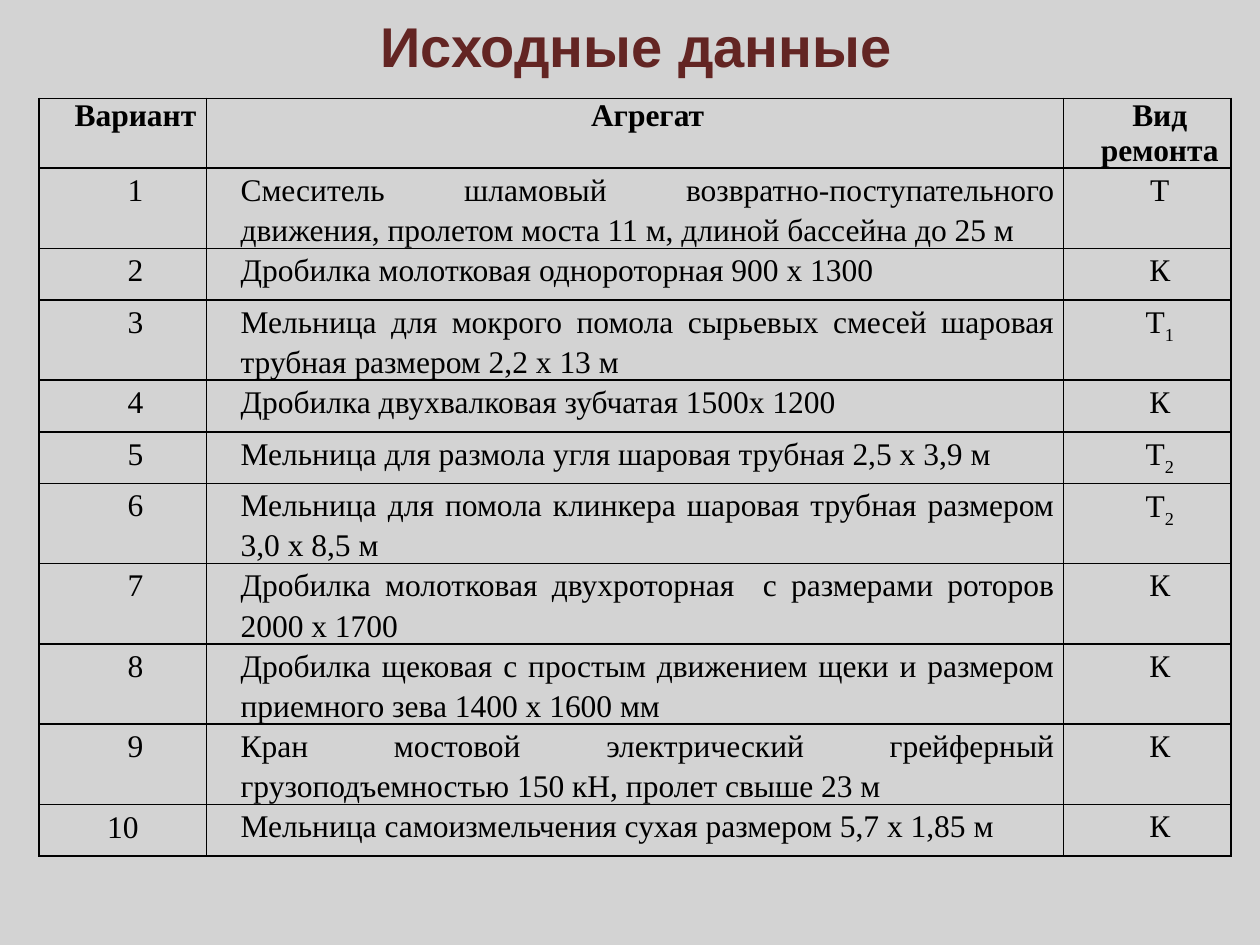
"""Build a slide with a table of initial data for repair planning."""
from lxml import etree
from pptx import Presentation
from pptx.dml.color import RGBColor
from pptx.enum.text import MSO_ANCHOR, PP_ALIGN
from pptx.oxml.ns import qn
from pptx.util import Inches, Pt

CENTER, JUSTIFY = PP_ALIGN.CENTER, PP_ALIGN.JUSTIFY
MIDDLE = MSO_ANCHOR.MIDDLE
COLORS = {"page": "D3D3D3", "title": "632523", "text": "000000", "border": "000000"}
HEADERS = ["Вариант", "Агрегат", "Вид ремонта"]
UNITS = [
    ("Смеситель шламовый возвратно-поступательного движения, "
     "пролетом моста 11 м, длиной бассейна до 25 м", "Т", ""),
    ("Дробилка молотковая однороторная 900 х 1300", "К", ""),
    ("Мельница для мокрого помола сырьевых смесей шаровая трубная размером 2,2 х 13 м", "Т", "1"),
    ("Дробилка двухвалковая зубчатая 1500х 1200", "К", ""),
    ("Мельница для размола угля шаровая трубная 2,5 х 3,9 м", "Т", "2"),
    ("Мельница для помола клинкера шаровая трубная размером 3,0 х 8,5 м", "Т", "2"),
    ("Дробилка молотковая двухроторная  с размерами роторов 2000 х 1700", "К", ""),
    ("Дробилка щековая с простым движением щеки и размером приемного зева 1400 х 1600 мм", "К", ""),
    ("Кран мостовой электрический грейферный грузоподъемностью 150 кН, пролет свыше 23 м", "К", ""),
    ("Мельница самоизмельчения сухая размером 5,7 х 1,85 м", "К", ""),
]
COLUMN_WIDTHS = [1.33, 6.8, 1.33]
ROW_HEIGHT = 0.41


def add_span(para, text, size=18, font="Times New Roman", color="text", bold=False, subscript=False):
    """Add a formatted run to a paragraph."""
    span = para.add_run()
    span.text = text
    span.font.size = Pt(size)
    span.font.name = font
    span.font.bold = bold
    span.font.color.rgb = RGBColor.from_string(COLORS[color])
    if subscript:
        span.font._element.set("baseline", "-25000")


class SlideBuilder:
    """Hold the slide and its table style."""

    def __init__(self, page, inset=0.07, indent=0.2, border_width=1):
        """Keep the style and paint the background."""
        self.page = page
        self.inset = Inches(inset)
        self.indent = Inches(indent)
        self.border_width = Pt(border_width)
        page.background.fill.solid()
        page.background.fill.fore_color.rgb = RGBColor.from_string(COLORS["page"])

    def title(self, text, left, top, width, height):
        """Place and format the title."""
        box = self.page.shapes.title
        box.left, box.top = Inches(left), Inches(top)
        box.width, box.height = Inches(width), Inches(height)
        box.text_frame.vertical_anchor = MIDDLE
        para = box.text_frame.paragraphs[0]
        para.alignment = CENTER
        add_span(para, text, size=32, font="Arial", color="title", bold=True)

    def table(self, row_count, left, top):
        """Add an unbanded table and return it."""
        frame = self.page.shapes.add_table(
            row_count, len(COLUMN_WIDTHS), Inches(left), Inches(top),
            Inches(sum(COLUMN_WIDTHS)), Inches(ROW_HEIGHT * row_count))
        table = frame.table
        table.first_row = table.horz_banding = False
        for column, width in zip(table.columns, COLUMN_WIDTHS):
            column.width = Inches(width)
        for row in table.rows:
            row.height = Inches(ROW_HEIGHT)
        return table

    def cell(self, cell, text, subscript="", align=CENTER, spacing=1.15, bold=False, indented=True):
        """Fill one cell with text and outline it."""
        cell.fill.background()
        self.borders(cell)
        para = cell.text_frame.paragraphs[0]
        para.alignment = align
        para.line_spacing = spacing
        if indented:
            cell.margin_left = cell.margin_right = self.inset
            cell.margin_top = cell.margin_bottom = 0
            properties = para._p.get_or_add_pPr()
            properties.set("marL", str(self.indent))
            properties.set("indent", "0")
        add_span(para, text, bold=bold)
        if subscript:
            add_span(para, subscript, subscript=True)

    def borders(self, cell):
        """Draw the four cell borders."""
        properties = cell._tc.get_or_add_tcPr()
        for position, side in enumerate(("lnL", "lnR", "lnT", "lnB")):
            line = etree.Element(qn(f"a:{side}"), w=str(self.border_width))
            fill = etree.SubElement(line, qn("a:solidFill"))
            etree.SubElement(fill, qn("a:srgbClr"), val=COLORS["border"])
            properties.insert(position, line)


def main():
    """Build and save the deck."""
    deck = Presentation()
    deck.slide_width, deck.slide_height = Inches(10), Inches(7.5)
    builder = SlideBuilder(deck.slides.add_slide(deck.slide_layouts[5]))
    builder.title("Исходные данные", 0.55, 0, 9, 0.72)
    table = builder.table(len(UNITS) + 1, 0.31, 0.78)
    for column, header in enumerate(HEADERS):
        builder.cell(table.cell(0, column), header, spacing=1.0, bold=True)
    for number, (unit, repair, grade) in enumerate(UNITS, start=1):
        is_last = number == len(UNITS)
        builder.cell(table.cell(number, 0), str(number),
                     spacing=1.0 if is_last else 1.15, indented=not is_last)
        builder.cell(table.cell(number, 1), unit, align=JUSTIFY)
        builder.cell(table.cell(number, 2), repair, subscript=grade)
    deck.save("out.pptx")


if __name__ == "__main__":
    main()
